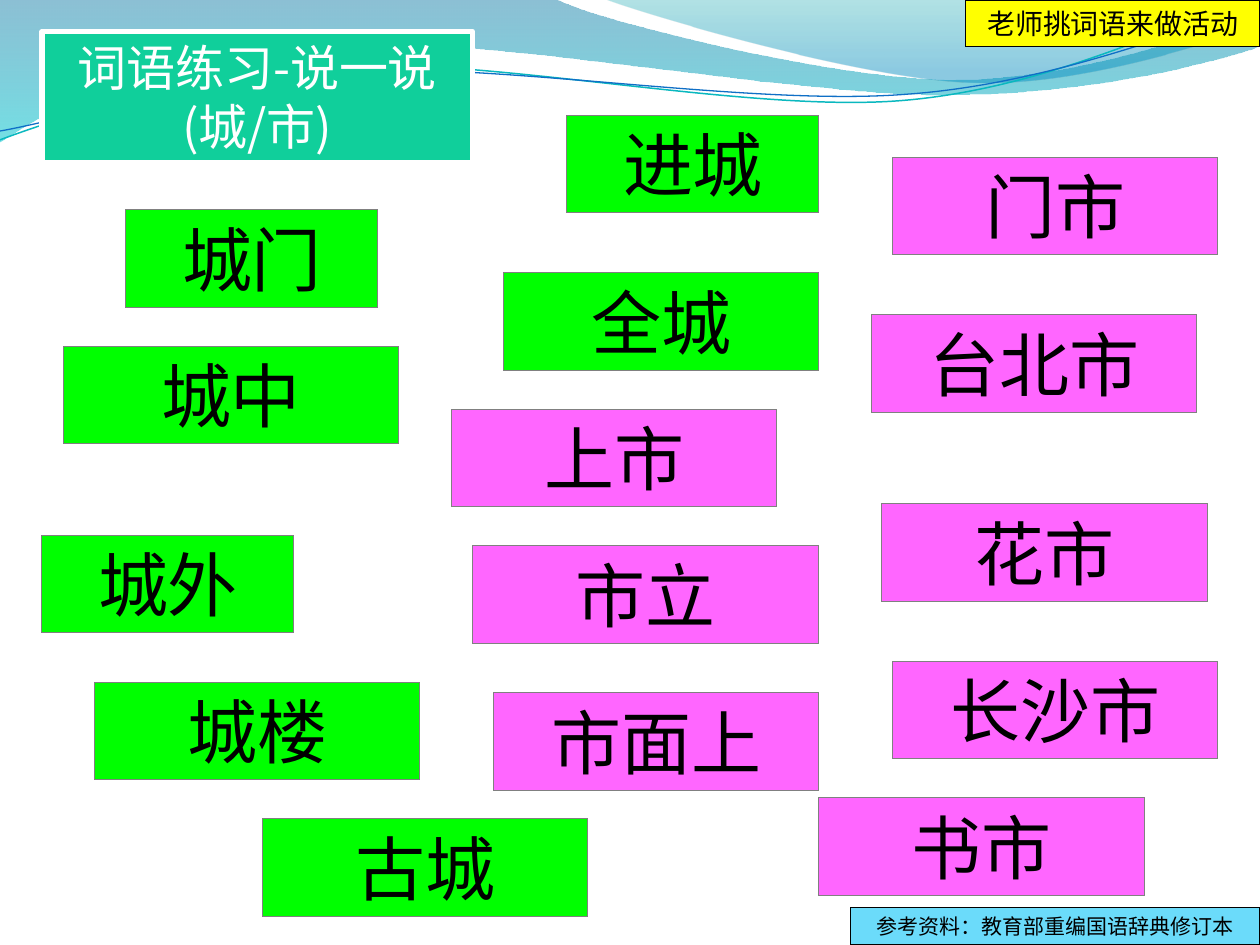
from math import cos, radians, sin

from lxml import etree
from pptx import Presentation
from pptx.dml.color import RGBColor
from pptx.enum.shapes import MSO_SHAPE as Preset
from pptx.enum.text import MSO_ANCHOR as Anchor, MSO_AUTO_SIZE as AutoSize, PP_ALIGN as Align
from pptx.oxml.ns import qn
from pptx.util import Inches, Pt

FONT = "Noto Sans CJK SC"
COLORS = {
    "city": "00FF00", "market": "FF66FF", "title": "10CF9B", "source": "6BDBFA",
    "note": "FFFF00", "black": "000000", "white": "FFFFFF", "gray": "808080",
    "deep": "0074A1", "aqua": "00C6CF", "teal": "00A1A9", "sky": "008BBF",
    "cyan line": "0AB8BF", "blue line": "0F6FC6",
}
HEX = {name: RGBColor.from_string(value) for name, value in COLORS.items()}

prs = Presentation()
prs.slide_width, prs.slide_height = Inches(10), Inches(7.5)
slide = prs.slides.add_slide(prs.slide_layouts[6])
CELL = prs.slide_width / 120  # the grid has 120 columns and 90 rows


def add_label(text, col, row, cols, rows, fill, size=40, color="black", line="gray", weight=None):
    """Add a filled, outlined box with centred text, placed in grid cells."""
    box = slide.shapes.add_shape(Preset.RECTANGLE, *(round(n * CELL) for n in (col, row, cols, rows)))
    box.shadow.inherit = False
    box._element.remove(box._element.find(qn("p:style")))
    box.fill.solid()
    box.fill.fore_color.rgb = HEX[fill]
    box.line.color.rgb = HEX[line]
    if weight:
        box.line.width = Pt(weight)
    frame = box.text_frame
    frame.word_wrap = True
    frame.auto_size = AutoSize.SHAPE_TO_FIT_TEXT
    frame.vertical_anchor = Anchor.TOP
    paragraph = frame.paragraphs[0]
    paragraph.alignment = Align.CENTER
    run = paragraph.add_run()
    run.text = text
    run.font.size = Pt(size)
    run.font.name = FONT
    run.font.color.rgb = HEX[color]
    etree.SubElement(run._r.get_or_add_rPr(), qn("a:ea"), typeface=FONT)


def add_outline(start, steps, close):
    """Draw from start in inches; a step of three points is a Bezier curve, of one a line."""
    points = [(Inches(x), Inches(y)) for x, y in [start] + [p for step in steps for p in step]]
    builder = slide.shapes.build_freeform(*points[0])
    builder.add_line_segments(points[1:], close=close)
    outline = builder.convert_to_shape()
    outline.shadow.inherit = False
    segments = iter(list(outline._element.iter(qn("a:lnTo"))))
    for step in steps:
        group = [next(segments) for _ in step]
        if len(group) == 3:
            curve = etree.Element(qn("a:cubicBezTo"))
            group[0].addprevious(curve)
            for segment in group:
                curve.append(segment[0])
                segment.getparent().remove(segment)
    return outline


# Translucent waves: start, steps, (colour, position, opacity in percent) for each stop
waves = [
    ((0, 0), [
        [(4.4, -0.01)],
        [(4.76, 0.17), (6.64, 0.63), (7.58, 0.63)],
        [(8.53, 0.63), (9.58, 0.26), (10, 0.09)],
        [(10.01, 0.36)],
        [(9.83, 0.44), (8.7, 0.76), (7.46, 0.75)],
        [(6.22, 0.75), (3.82, 0.28), (2.57, 0.34)],
        [(1.29, 0.36), (0.46, 0.83), (-0.01, 1.13)],
        [(0, 0)],
    ], [("deep", 0, 45), ("aqua", 1, 55)]),
    ((4.79, -0.01), [
        [(5.09, 0.11), (6.82, 0.62), (7.69, 0.65)],
        [(8.56, 0.69), (9.61, 0.32), (10, 0.21)],
        [(10, 0)],
        [(4.79, -0.01)],
    ], [("teal", 0, 30), ("sky", 0.8, 45)]),
]
for start, steps, stops in waves:
    wave = add_outline(start, steps, close=True)
    wave.line.fill.background()
    wave.fill.gradient()
    wave.fill.gradient_angle = 270
    for stop, (color, position, opacity) in zip(wave.fill.gradient_stops, stops):
        stop.color.rgb = HEX[color]
        stop.position = position
    for rgb, (_, _, opacity) in zip(wave._element.spPr.iter(qn("a:srgbClr")), stops):
        etree.SubElement(rgb, qn("a:alpha"), val=str(opacity * 1000))

# Ripples are laid out level, then the shape is turned by TILT degrees about its middle
TILT = -2.7
C, S = cos(radians(TILT)), sin(radians(TILT))
ripples = [
    ((0, 1.11), [
        [(0.48, 0.93), (1.58, 0.57), (2.77, 0.52)],
        [(3.95, 0.47), (5.93, 0.89), (7.13, 0.8)],
        [(8.33, 0.71), (9.38, 0.15), (9.98, -0.02)],
    ], (4.99, 0.58), "cyan line", 0.85),
    ((0, 1.04), [
        [(0.47, 0.96), (1.64, 0.61), (2.83, 0.56)],
        [(4.03, 0.51), (5.97, 0.84), (7.17, 0.75)],
        [(8.36, 0.67), (9.41, 0.21), (10, 0.06)],
    ], (5, 0.59), "blue line", 0.75),
]
for start, steps, (mid_x, mid_y), color, weight in ripples:
    level = [[(mid_x + (x - mid_x) * C + (y - mid_y) * S, mid_y - (x - mid_x) * S + (y - mid_y) * C)
              for x, y in step] for step in [[start]] + steps]
    ripple = add_outline(level[0][0], level[1:], close=False)
    ripple.rotation = TILT
    ripple.fill.background()
    ripple.line.color.rgb = HEX[color]
    ripple.line.width = Pt(weight)

# Word cards: text, column, row, columns wide
words = {
    "city": [
        ("全城", 48, 26, 30), ("城外", 4, 51, 24), ("城门", 12, 20, 24), ("城中", 6, 33, 32),
        ("城楼", 9, 65, 31), ("古城", 25, 78, 31), ("进城", 54, 11, 24),
    ],
    "market": [
        ("市立", 45, 52, 33), ("书市", 78, 76, 31), ("门市", 85, 15, 31), ("市面上", 47, 66, 31),
        ("上市", 43, 39, 31), ("花市", 84, 48, 31), ("台北市", 83, 30, 31), ("长沙市", 85, 63, 31),
    ],
}
for group, cards in words.items():
    for word, col, row, cols in cards:
        add_label(word, col, row, cols, 9.25, group)

add_label("词语练习-说一说(城/市)", 4, 3, 41, 12.5, "title", size=28, color="white", line="white", weight=3)
add_label("参考资料：教育部重编国语辞典修订本", 81, 86.4, 39, 3.6, "source", size=12, line="black")
add_label("老师挑词语来做活动", 92, 0, 28, 4.4, "note", size=16, line="black")

prs.save("out.pptx")
